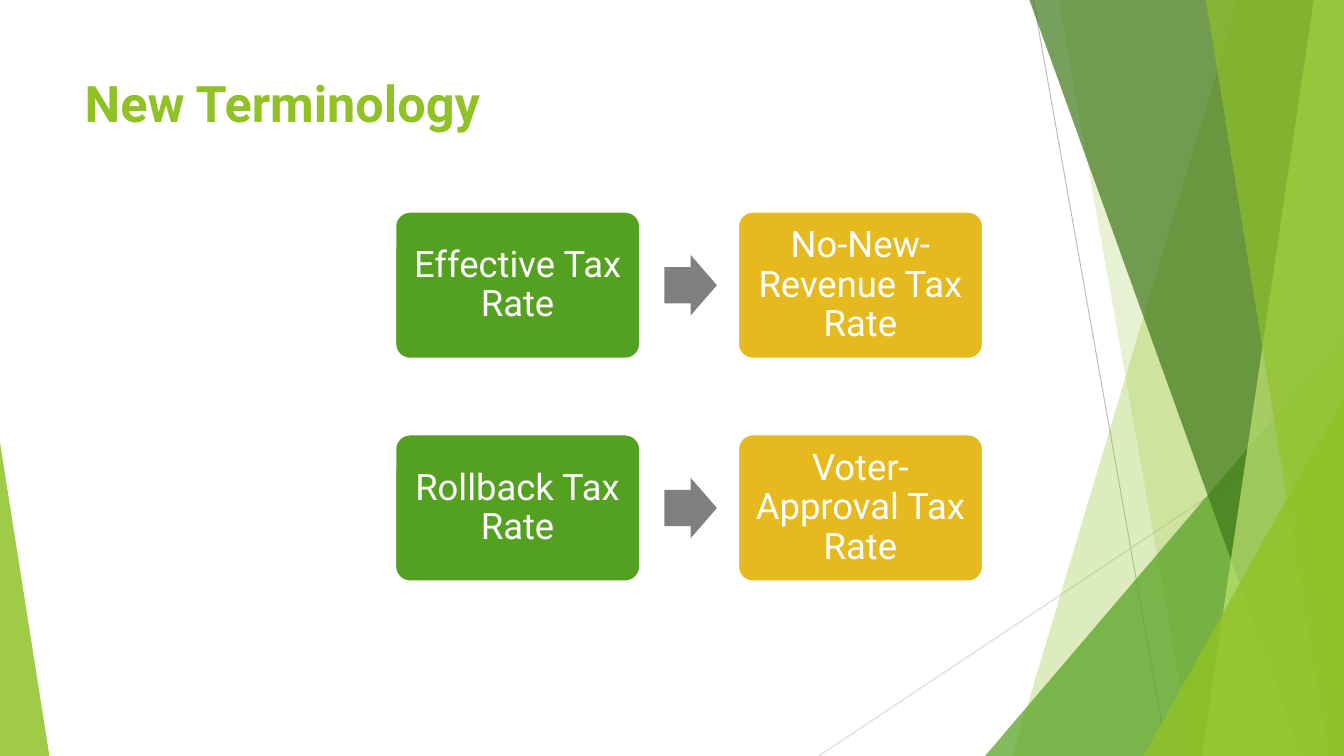
from lxml import etree
from pptx import Presentation
from pptx import util as u
from pptx.dml.color import RGBColor
from pptx.enum import shapes, text
from pptx.oxml import ns

WIDTH, HEIGHT = 13.33, 7.5
LIME, GREEN, DARK, PALE = "90C226", "54A021", "3F7819", "C0E474"
GOLD, GRAY, WHITE = "E6B91E", "808080", "FFFFFF"


def color(value):
    return RGBColor.from_string(value)


def apply(obj, values):
    for name, value in values.items():
        setattr(obj, name, value)


class Builder:
    font = {"name": "Roboto"}

    def __init__(self, slide):
        self.s = slide

    def paint(self, sp, fill, alpha=100, line=None, width=1.5):
        sp.shadow.inherit = False
        sp.fill.solid()
        sp.fill.fore_color.rgb = color(fill)
        if alpha < 100:
            clr = sp.fill._xPr.find(".//" + ns.qn("a:srgbClr"))
            etree.SubElement(clr, ns.qn("a:alpha"), val=str(alpha * 1000))
        if line:
            sp.line.color.rgb = color(line)
            sp.line.width = u.Pt(width)
        else:
            sp.line.fill.background()
        return sp

    def shape(self, kind, box, fill, adj, **style):
        sp = self.s.shapes.add_shape(kind, *map(u.Inches, box))
        for i, value in enumerate(adj):
            sp.adjustments[i] = value
        return self.paint(sp, fill, **style)

    def facet(self, points, fill, alpha):
        pts = [(u.Inches(x), u.Inches(y)) for x, y in points]
        fb = self.s.shapes.build_freeform(*pts[0], scale=1.0)
        fb.add_line_segments(pts[1:], close=True)
        return self.paint(fb.convert_to_shape(), fill, alpha)

    def triangle(self, box, fill, alpha, apex):
        return self.shape(shapes.MSO_SHAPE.ISOSCELES_TRIANGLE, box, fill, [apex], alpha=alpha)

    def line(self, ends, rgb):
        c = self.s.shapes.add_connector(shapes.MSO_CONNECTOR.STRAIGHT, *map(u.Inches, ends))
        c.line.color.rgb = color(rgb)
        c.line.width = u.Pt(0.75)
        etree.SubElement(c._element.spPr, ns.qn("a:effectLst"))

    def label(self, tf, words, frame, para, font, rgb):
        apply(tf, {"word_wrap": True, "auto_size": text.MSO_AUTO_SIZE.NONE, **frame})
        p = tf.paragraphs[0]
        apply(p, para)
        r = p.add_run()
        r.text = words
        apply(r.font, {**self.font, **font})
        r.font.color.rgb = color(rgb)

    def title(self, words, box):
        sp = self.s.shapes.title
        apply(sp, dict(zip(("left", "top", "width", "height"), map(u.Inches, box))))
        self.label(sp.text_frame, words, {"vertical_anchor": text.MSO_ANCHOR.TOP},
                   {"alignment": text.PP_ALIGN.LEFT}, {"size": u.Pt(36), "bold": True}, LIME)

    def card(self, words, box, fill):
        sp = self.shape(shapes.MSO_SHAPE.ROUNDED_RECTANGLE, box, fill, [0.1], line=WHITE)
        sides = ("margin_left", "margin_top", "margin_right", "margin_bottom")
        frame = {side: u.Inches(0.11) for side in sides}
        self.label(sp.text_frame, words, {**frame, "vertical_anchor": text.MSO_ANCHOR.MIDDLE},
                   {"alignment": text.PP_ALIGN.CENTER, "line_spacing": 0.9},
                   {"size": u.Pt(26)}, WHITE)

    def arrow(self, box):
        self.shape(shapes.MSO_SHAPE.RIGHT_ARROW, box, GRAY, [0.6, 0.5])

    def backdrop(self):
        self.line((10.25, 0, 11.58, HEIGHT), "BFBFBF")
        self.line((WIDTH, 4.03, 8.12, HEIGHT), "D9D9D9")
        self.band(12.28, 10.04, LIME, 30)
        self.band(10.5, 11.83, LIME, 20)
        self.triangle((9.77, 3.33, 3.56, 4.17), GREEN, 72, 1)
        self.band(10.21, 12.91, DARK, 70)
        self.band(13.03, 11.92, PALE, 70)
        self.band(11.96, 13.18, LIME, 65)
        self.triangle((11.34, 3.93, 1.99, 3.57), LIME, 80, 1)
        self.triangle((0, 4.39, 0.49, 3.11), LIME, 85, 0)

    def band(self, top_x, bottom_x, fill, alpha):
        corners = [(top_x, 0), (WIDTH, 0), (WIDTH, HEIGHT), (bottom_x, HEIGHT)]
        self.facet(corners, fill, alpha)


def main():
    prs = Presentation()
    prs.slide_width, prs.slide_height = u.Inches(WIDTH), u.Inches(HEIGHT)
    b = Builder(prs.slides.add_slide(prs.slide_layouts[5]))
    b.backdrop()
    b.title("New Terminology", (0.74, 0.67, 9.4, 1.44))
    terms = [("Effective Tax Rate", "No-New-Revenue Tax Rate"),
             ("Rollback Tax Rate", "Voter-Approval Tax Rate")]
    card_w, card_h, arrow_w, arrow_h = 2.43, 1.46, 0.52, 0.6
    for row, (old, new) in enumerate(terms):
        top = 2.1 + row * 2.21
        b.card(old, (3.92, top, card_w, card_h), GREEN)
        b.arrow((6.59, top + (card_h - arrow_h) / 2, arrow_w, arrow_h))
        b.card(new, (7.32, top, card_w, card_h), GOLD)
    prs.save("out.pptx")


if __name__ == "__main__":
    main()
